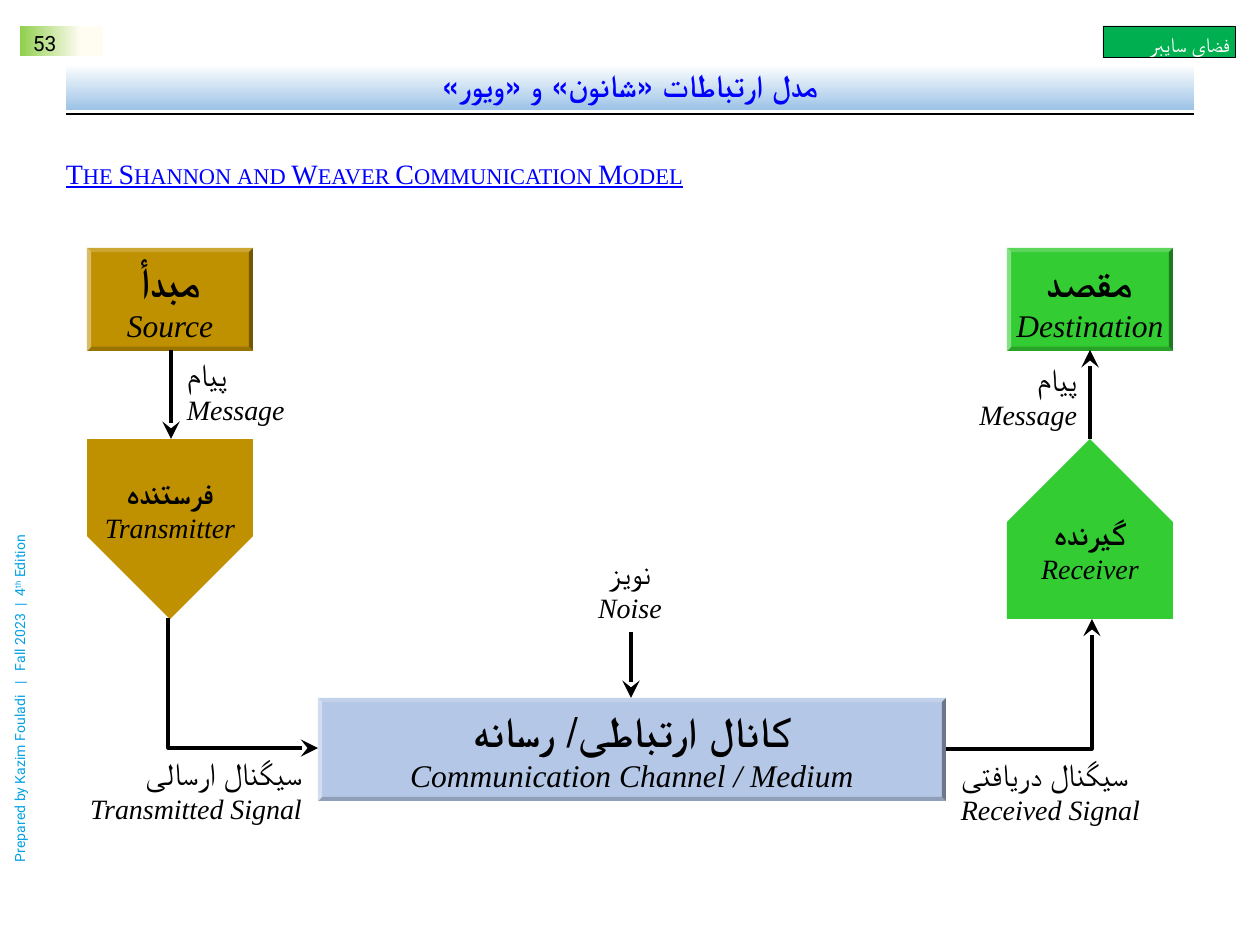
import lxml.etree
import pptx
import pptx.dml.color
import pptx.enum.shapes
import pptx.enum.text
import pptx.oxml.ns
import pptx.util

PX = 914400 / 126
SHAPE = pptx.enum.shapes.MSO_SHAPE
ALIGN = pptx.enum.text.PP_ALIGN
ANCHOR = pptx.enum.text.MSO_ANCHOR
SERIF, SANS, ROBOTO = "Times New Roman", "Calibri", "Roboto"
GOLD, GREEN, PALE_BLUE = "BF9000", "33CC33", "B4C7E7"
BLACK, BLUE = "000000", "0000FF"


def px(value):
    return pptx.util.Emu(round(value * PX))


def color(code):
    return pptx.dml.color.RGBColor.from_string(code)


def qn(tag):
    return pptx.oxml.ns.qn(tag)


def frame(area, left, top, width, height):
    """Return EMU lengths for a part placed relative to an area's corner."""
    return [px(v) for v in (area[0] + left, area[1] + top, width, height)]


def write(shape, paras, align=ALIGN.CENTER, anchor=ANCHOR.TOP,
          insets=(13, 6, 13, 6), rtl=False, spacing=None):
    """Fill a shape; each paragraph is a list of (text, format, run attributes)."""
    text = shape.text_frame
    text.word_wrap = True
    text.vertical_anchor = anchor
    sides = ("margin_left", "margin_top", "margin_right", "margin_bottom")
    for side, inset in zip(sides, insets):
        setattr(text, side, px(inset))
    for index, spans in enumerate(paras):
        para = text.add_paragraph() if index else text.paragraphs[0]
        para.alignment = align
        if spacing:
            para.line_spacing = spacing
        if rtl:
            para._p.get_or_add_pPr().set("rtl", "1")
        for words, style, extra in spans:
            span = para.add_run()
            span.text = words
            values = dict(style)
            span.font.color.rgb = color(values.pop("color", BLACK))
            span.font.size = pptx.util.Pt(values.pop("size"))
            for name, value in values.items():
                setattr(span.font, name, value)
            for name, value in extra.items():
                span.font._element.set(name, value)


def line_of(words, size, name, extra=None, **style):
    return [(words, dict(size=size, name=name, **style), extra or {})]


def bilingual(persian, english, sizes, name=SERIF, bold=False):
    return [line_of(persian, sizes[0], name, bold=bold),
            line_of(english, sizes[1], SERIF, italic=True)]


def add_shape(page, kind, place, fill=None):
    shape = page.shapes.add_shape(kind, *place)
    shape.shadow.inherit = False
    shape.line.fill.background()
    if fill:
        shape.fill.solid()
        shape.fill.fore_color.rgb = color(fill)
    return shape


def gradient(shape, angle, stops):
    shape.fill.gradient()
    shape.fill.gradient_angle = angle
    for stop, (position, code) in zip(shape.fill.gradient_stops, stops):
        stop.position = position
        stop.color.rgb = color(code)


def stroke(shape, width, arrow=False):
    shape.line.color.rgb = color(BLACK)
    shape.line.width = pptx.util.Pt(width)
    if arrow:
        lxml.etree.SubElement(shape.line._get_or_add_ln(), qn("a:tailEnd"),
                              type="stealth", w="lg", len="lg")


def straight(page, area, start, end, width, arrow=False):
    ends = [px(area[i] + point[i]) for point in (start, end) for i in (0, 1)]
    kind = pptx.enum.shapes.MSO_CONNECTOR.STRAIGHT
    line = page.shapes.add_connector(kind, *ends)
    stroke(line, width, arrow)
    lxml.etree.SubElement(line._element.spPr, qn("a:effectLst"))


def elbow(page, area, points):
    points = [(area[0] + x, area[1] + y) for x, y in points]
    builder = page.shapes.build_freeform(*points[0], scale=PX)
    builder.add_line_segments(points[1:], close=False)
    shape = builder.convert_to_shape()
    shape.shadow.inherit = False
    shape.fill.background()
    stroke(shape, 1.75, arrow=True)


def draw_header(page, area):
    number = add_shape(page, SHAPE.RECTANGLE, frame(area, 0, 0, 83, 30))
    gradient(number, 180, [(0.27, "FFFCF2"), (0.99, "92D050")])
    write(number, [line_of("53", 12, ROBOTO)], ALIGN.LEFT, insets=(13, 5, 13, 0))

    topic = add_shape(page, SHAPE.RECTANGLE, frame(area, 1083, 0, 132, 32), "00B050")
    stroke(topic, 0.5)
    write(topic, [line_of("فضای سایبر", 12, "Arial", color="FFFFFF")],
          ALIGN.RIGHT, ANCHOR.MIDDLE, (5, 10, 5, 6))

    title = add_shape(page, SHAPE.RECTANGLE, frame(area, 46, 38, 1128, 46))
    gradient(title, 270, [(0, "FFFFFF"), (1, "9DC3E6")])
    write(title, [line_of("مدل ارتباطات «شانون» و «ویور»", 18, SANS, color=BLUE,
                          bold=True)], anchor=ANCHOR.MIDDLE, rtl=True, spacing=0.9)
    straight(page, area, (46, 88), (1174, 88), 1.5)


def draw_subtitle(page, area):
    box = page.shapes.add_textbox(*frame(area, 0, 0, *area[2:]))
    words = "The Shannon and Weaver Communication Model"
    write(box, [line_of(words, 16, SERIF, {"cap": "small"}, color=BLUE,
                        underline=True)], ALIGN.LEFT, insets=(0, 6, 13, 6), spacing=0.9)


def draw_credit(page, area):
    """Place the credit so that it reads upwards along the area's centre."""
    left, top, width, height = area
    box = page.shapes.add_textbox(*frame(
        area, (width - height) / 2, (height - width) / 2, height, width))
    box.rotation = 270
    parts = [("Prepared by Kazim Fouladi   |   Fall 2023  |  4", {}),
             ("th", {"baseline": "30000"}), (" Edition", {})]
    style = dict(size=8, name=ROBOTO, color="04A1E3")
    write(box, [[(words, style, extra) for words, extra in parts]], ALIGN.LEFT)


def draw_diagram(page, area):
    for left, top, width, fill, persian, english in (
            (0, 0, 166, GOLD, "مبدأ", "Source"),
            (920, 0, 166, GREEN, "مقصد", "Destination"),
            (231, 450, 628, PALE_BLUE, "کانال ارتباطی/ رسانه",
             "Communication Channel / Medium")):
        bevel = add_shape(page, SHAPE.BEVEL, frame(area, left, top, width, 103), fill)
        bevel.adjustments[0] = 0.04
        write(bevel, bilingual(persian, english, (24, 18), SANS, True),
              anchor=ANCHOR.MIDDLE, insets=(5, 5, 5, 5), rtl=True)

    for left, turn, flow, fill, persian, english in (
            (-7, 90, "vert270", GOLD, "فرستنده", "Transmitter"),
            (913, 270, "vert", GREEN, "گیرنده", "Receiver")):
        plate = add_shape(page, SHAPE.PENTAGON, frame(area, left, 198, 180, 166), fill)
        plate.rotation = turn
        write(plate, bilingual(persian, english, (18, 16), SANS, True),
              anchor=ANCHOR.MIDDLE)
        plate.text_frame._txBody.bodyPr.set("vert", flow)

    for left, top, width, align, persian, english in (
            (87, 101, 188, ALIGN.LEFT, "پیام", "Message"),
            (815, 106, 188, ALIGN.RIGHT, "پیام", "Message"),
            (449, 299, 188, ALIGN.CENTER, "نویز", "Noise"),
            (-13, 500, 241, ALIGN.RIGHT, "سیگنال ارسالی", "Transmitted Signal"),
            (861, 501, 241, ALIGN.LEFT, "سیگنال دریافتی", "Received Signal")):
        label = page.shapes.add_textbox(*frame(area, left, top, width, 84))
        write(label, bilingual(persian, english, (18, 16)), align)

    for start, end in (((84, 102), (84, 191)), ((1003, 191), (1003, 102)),
                       ((544, 384), (544, 450))):
        straight(page, area, start, end, 2, arrow=True)
    elbow(page, area, [(81, 370), (81, 500), (231, 500)])
    elbow(page, area, [(859, 501), (1005, 501), (1005, 371)])


def main():
    deck = pptx.Presentation()
    deck.slide_width, deck.slide_height = px(1260), px(945)
    page = deck.slides.add_slide(deck.slide_layouts[6])
    draw_header(page, (20, 26, 1215, 89))
    draw_subtitle(page, (66, 154, 1128, 28))
    draw_credit(page, (5, 502, 30, 373))
    draw_diagram(page, (87, 248, 1086, 580))
    deck.save("out.pptx")


if __name__ == "__main__":
    main()
